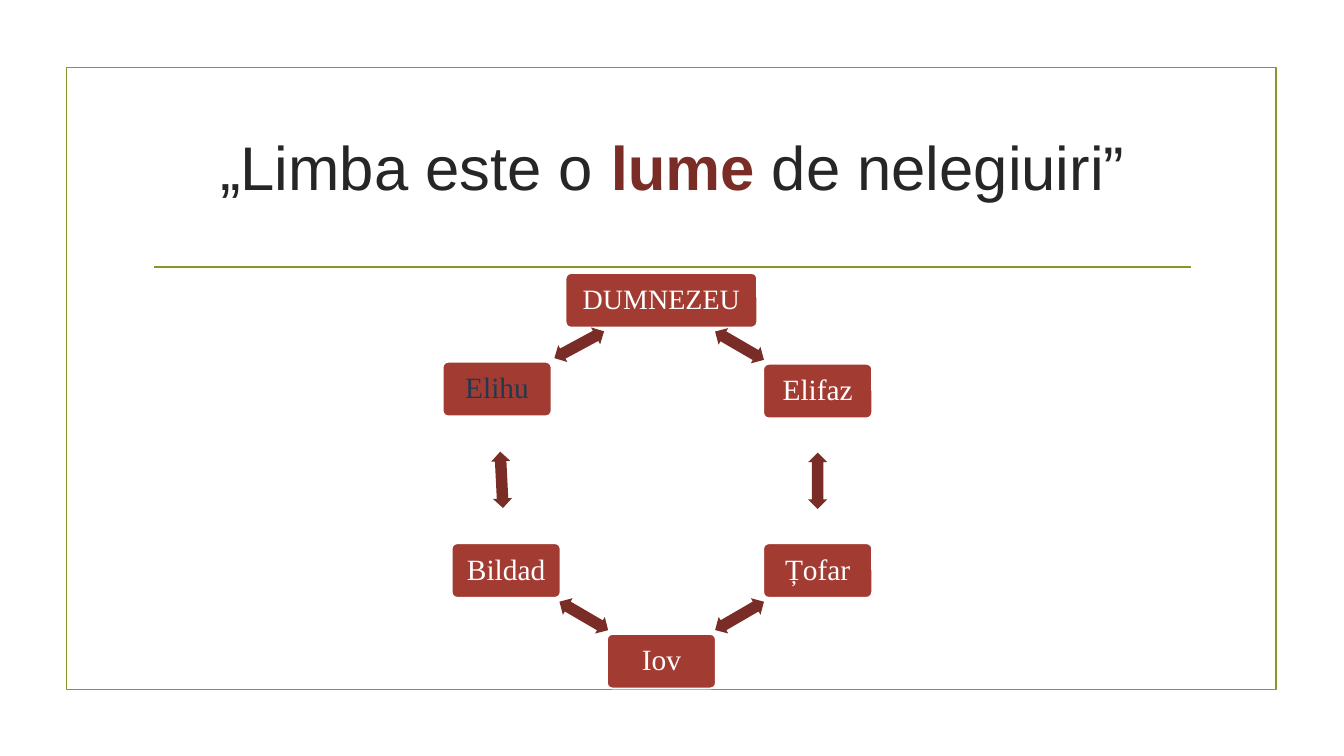
from math import atan2, degrees

from lxml.etree import SubElement
from pptx import Presentation
from pptx.dml.color import RGBColor
from pptx.enum.shapes import MSO_CONNECTOR, MSO_SHAPE
from pptx.enum.text import MSO_ANCHOR, PP_ALIGN
from pptx.oxml.ns import qn
from pptx.util import Inches, Pt

OLIVE = RGBColor(0x83, 0x99, 0x2A)
DARK = RGBColor(0x26, 0x26, 0x26)
MAROON = RGBColor(0x7A, 0x2D, 0x26)
RED = RGBColor(0xA2, 0x3C, 0x33)
NAVY = RGBColor(0x22, 0x38, 0x4E)
WHITE = RGBColor(0xFF, 0xFF, 0xFF)

TITLE = [("„Limba este o ", DARK, False), ("lume", MAROON, True), (" de nelegiuiri”", DARK, False)]
SPEAKERS = [
    ("DUMNEZEU", 6.56, 2.98, 1.9, 20, WHITE),
    ("Elifaz", 8.11, 3.88, 1.08, 21, WHITE),
    ("Țofar", 8.11, 5.66, 1.08, 21, WHITE),
    ("Iov", 6.56, 6.56, 1.08, 21, WHITE),
    ("Bildad", 5.02, 5.66, 1.08, 21, WHITE),
    ("Elihu", 4.93, 3.86, 1.08, 21, NAVY),
]
SPEAKER_HEIGHT = 0.54
ARROW_WIDTH, ARROW_HEIGHT = 0.56, 0.19


def add_centered_shape(page, kind, center_x, center_y, width, height):
    shape = page.shapes.add_shape(kind, Inches(center_x - width / 2), Inches(center_y - height / 2),
                                  Inches(width), Inches(height))
    shape.shadow.inherit = False
    return shape


def add_span(para, text, font, size, color, bold=False):
    span = para.add_run()
    span.text = text
    span.font.name = font
    span.font.size = Pt(size)
    span.font.color.rgb = color
    span.font.bold = bold


def add_frame(page):
    frame = add_centered_shape(page, MSO_SHAPE.RECTANGLE, 6.66, 3.755, 12, 6.17)
    frame.fill.background()
    rule = page.shapes.add_connector(MSO_CONNECTOR.STRAIGHT, Inches(1.53), Inches(2.65),
                                     Inches(11.81), Inches(2.65))
    for item in (frame, rule):
        item.line.color.rgb = OLIVE
        item.line.width = Pt(1.25)
    SubElement(rule._element.spPr, qn("a:effectLst"))


def add_title(page):
    box = page.shapes.add_textbox(Inches(1.42), Inches(0.8), Inches(10.5), Inches(1.7))
    box.text_frame.word_wrap = True
    box.text_frame.vertical_anchor = MSO_ANCHOR.MIDDLE
    para = box.text_frame.paragraphs[0]
    para.alignment = PP_ALIGN.CENTER
    for text, color, bold in TITLE:
        add_span(para, text, "Arial", 44, color, bold)


def add_speaker(page, name, center_x, center_y, width, size, color):
    box = add_centered_shape(page, MSO_SHAPE.ROUNDED_RECTANGLE, center_x, center_y, width, SPEAKER_HEIGHT)
    box.adjustments[0] = 0.1
    box.fill.solid()
    box.fill.fore_color.rgb = RED
    box.line.color.rgb = WHITE
    box.line.width = Pt(1.25)
    frame = box.text_frame
    frame.word_wrap = True
    frame.vertical_anchor = MSO_ANCHOR.MIDDLE
    frame.margin_left = frame.margin_right = Inches(0.1)
    frame.margin_top = frame.margin_bottom = Inches(0.1)
    para = frame.paragraphs[0]
    para.alignment = PP_ALIGN.CENTER
    para.line_spacing = 0.9
    add_span(para, name, "Times New Roman", size, color)


def add_arrow(page, start, end):
    start_x, start_y = start[1:3]
    end_x, end_y = end[1:3]
    arrow = add_centered_shape(page, MSO_SHAPE.LEFT_RIGHT_ARROW, (start_x + end_x) / 2,
                               (start_y + end_y) / 2, ARROW_WIDTH, ARROW_HEIGHT)
    arrow.adjustments[0] = 0.6
    arrow.adjustments[1] = 0.5
    arrow.rotation = degrees(atan2(end_y - start_y, end_x - start_x)) % 360
    arrow.fill.solid()
    arrow.fill.fore_color.rgb = MAROON
    arrow.line.fill.background()


def main():
    deck = Presentation()
    deck.slide_width = Inches(13.33)
    deck.slide_height = Inches(7.5)
    page = deck.slides.add_slide(deck.slide_layouts[6])
    add_frame(page)
    add_title(page)
    for speaker, following in zip(SPEAKERS, SPEAKERS[1:] + SPEAKERS[:1]):
        add_speaker(page, *speaker)
        add_arrow(page, speaker, following)
    deck.save("out.pptx")


if __name__ == "__main__":
    main()
